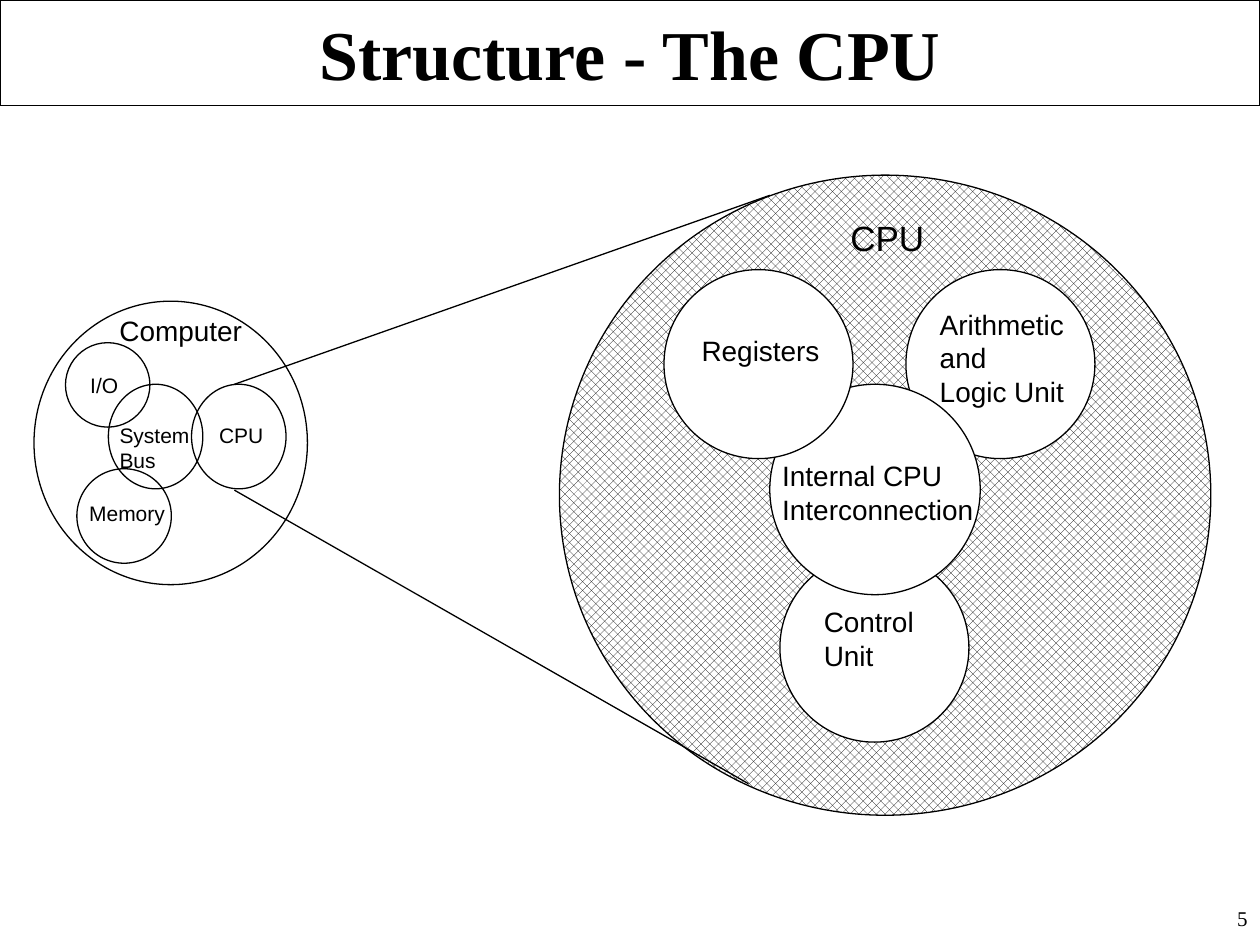
from pptx import Presentation
from pptx.dml.color import RGBColor
from pptx.enum import dml, shapes, text
from pptx.oxml.ns import qn
from pptx.util import Inches, Pt
from lxml import etree

BLACK, WHITE = "000000", "FFFFFF"
SANS, SERIF = "Arial", "Times New Roman"
LEFT, MID, RIGHT = text.PP_ALIGN.LEFT, text.PP_ALIGN.CENTER, text.PP_ALIGN.RIGHT
TOP, HALF = text.MSO_ANCHOR.TOP, text.MSO_ANCHOR.MIDDLE


def paint(color, code):
    color.rgb = RGBColor.from_string(code)


def edge(line):
    line.fill.solid()
    paint(line.color, BLACK)
    line.width = Pt(0.75)


def write(shape, words, size, font=SANS, bold=False, align=LEFT, anchor=HALF,
          wrap=False, fit=text.MSO_AUTO_SIZE.NONE):
    frame = shape.text_frame
    frame.text = words
    look = {
        "word_wrap": wrap, "auto_size": fit, "vertical_anchor": anchor,
        "margin_left": Inches(0.1), "margin_right": Inches(0.1),
        "margin_top": Inches(0.05), "margin_bottom": Inches(0.05),
    }
    for key, value in look.items():
        setattr(frame, key, value)
    for para in frame.paragraphs:
        para.alignment = align
        for run in para.runs:
            for key, value in {"name": font, "size": Pt(size), "bold": bold}.items():
                setattr(run.font, key, value)
            paint(run.font.color, BLACK)


def label(tree, box, words, size, **look):
    item = tree.add_textbox(*map(Inches, box))
    look = {"fit": text.MSO_AUTO_SIZE.SHAPE_TO_FIT_TEXT, **look}
    write(item, words, size, **look)


def circle(tree, box, fill=None):
    item = tree.add_shape(shapes.MSO_SHAPE.OVAL, *map(Inches, box))
    item.shadow.inherit = False
    edge(item.line)
    if fill:
        item.fill.solid()
        paint(item.fill.fore_color, fill)
    else:
        item.fill.background()
    return item


def ray(tree, start, end):
    ends = map(Inches, start + end)
    item = tree.add_connector(shapes.MSO_CONNECTOR.STRAIGHT, *ends)
    edge(item.line)
    etree.SubElement(item._element.spPr, qn("a:effectLst"))


def title(slide, words):
    item = slide.shapes.title
    for key, value in zip(("left", "top", "width", "height"), (0, 0, 10, 0.84)):
        setattr(item, key, Inches(value))
    edge(item.line)
    write(item, words, 40, font=SERIF, bold=True, align=MID, wrap=True)


def zoom(tree):
    disc = circle(tree, (4.44, 1.39, 5.17, 5.08))
    disc.fill.patterned()
    disc.fill.pattern = dml.MSO_PATTERN.PERCENT_50
    paint(disc.fill.fore_color, BLACK)
    paint(disc.fill.back_color, WHITE)
    ray(tree, (1.86, 3.05), (6.11, 1.55))
    ray(tree, (1.86, 3.89), (5.94, 6.22))
    label(tree, (6.65, 1.67, 0.79, 0.43), "CPU", 20)


def computer(tree):
    circle(tree, (0.27, 2.39, 2.17, 2.25))
    label(tree, (0.85, 2.44, 1.17, 0.37), "Computer", 16, anchor=TOP)
    write(circle(tree, (0.52, 2.72, 0.67, 0.67)), "I/O", 12)
    parts = [
        ((1.52, 3.05, 0.75, 0.83), (1.64, 3.3, 0.55, 0.3), "CPU"),
        ((0.61, 3.72, 0.75, 0.75), (0.61, 3.92, 0.8, 0.3), "Memory"),
        ((0.86, 3.05, 0.75, 0.83), (0.85, 3.3, 0.78, 0.5), "System\nBus"),
    ]
    for ring, box, words in parts:
        circle(tree, ring)
        label(tree, box, words, 12)


def units(tree):
    parts = [
        (7.19, 2.14, 1.5, (7.36, 2.39, 1.19, 0.9), "Arithmetic\nand\nLogic Unit"),
        (6.19, 4.39, 1.5, (6.44, 4.75, 0.94, 0.64), "Control\nUnit"),
        (6.11, 3.05, 1.67, (6.11, 3.59, 1.72, 0.64), "Internal CPU\nInterconnection"),
        (5.27, 2.14, 1.5, (5.47, 2.6, 1.14, 0.37), "Registers"),
    ]
    for left, top, size, box, words in parts:
        group = tree.add_group_shape().shapes
        circle(group, (left, top, size, size), WHITE)
        label(group, box, words, 16, anchor=TOP)


def main():
    deck = Presentation()
    deck.slide_width, deck.slide_height = Inches(10), Inches(7.5)
    slide = deck.slides.add_slide(deck.slide_layouts[5])
    tree = slide.shapes
    title(slide, "Structure - The CPU")
    zoom(tree.add_group_shape().shapes)
    computer(tree.add_group_shape().shapes)
    units(tree)
    label(tree, (7.92, 7.14, 2.08, 0.36), "5", 12, font=SERIF, align=RIGHT,
          anchor=TOP, wrap=True, fit=text.MSO_AUTO_SIZE.NONE)
    deck.save("out.pptx")


if __name__ == "__main__":
    main()
